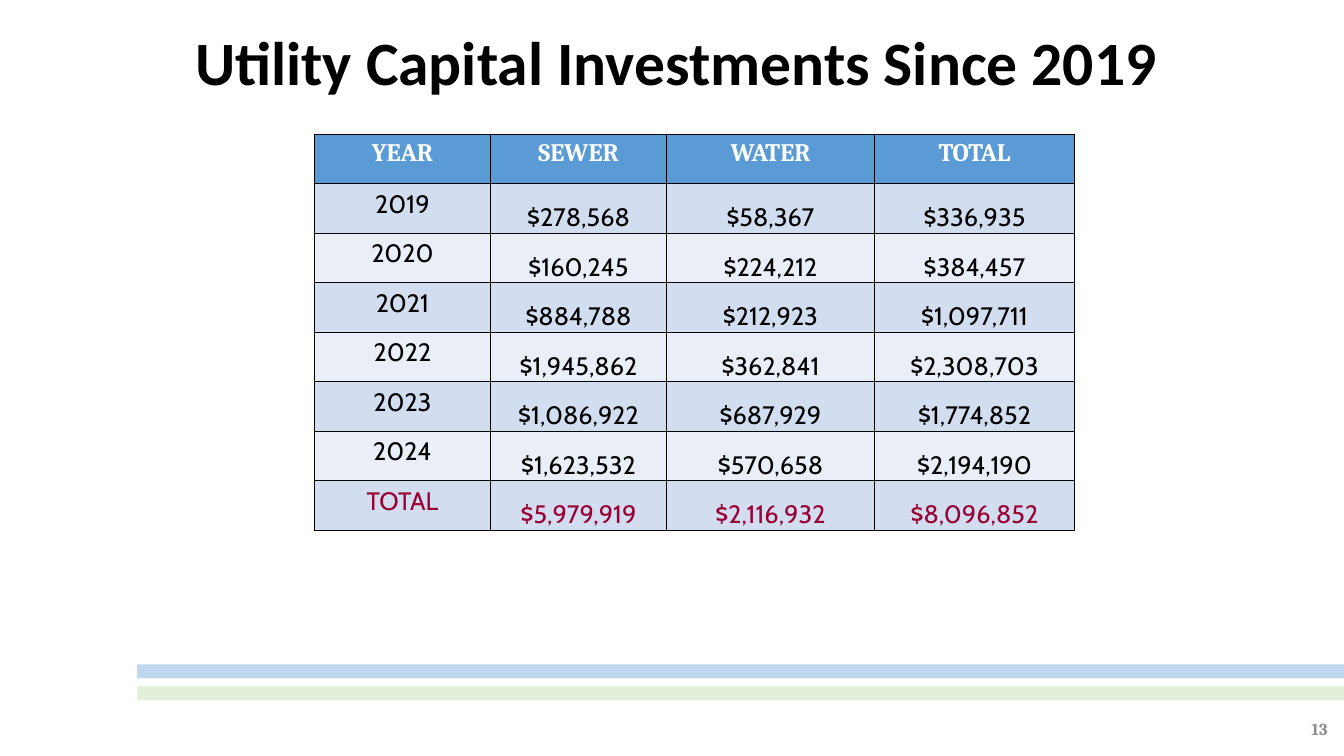
from lxml.etree import SubElement
from pptx import Presentation
from pptx.dml.color import RGBColor
from pptx.enum.shapes import MSO_SHAPE
from pptx.enum.text import MSO_ANCHOR as ANCHOR, PP_ALIGN as ALIGN
from pptx.oxml import parse_xml
from pptx.oxml.ns import nsdecls
from pptx.util import Pt


def color(value):
    return RGBColor.from_string(value)


def set_text(frame, text, font_name, size, text_color, bold, align):
    paragraph = frame.paragraphs[0]
    paragraph.text = text
    paragraph.alignment = align
    font = paragraph.font
    font.name, font.size, font.bold = font_name, Pt(size), bold
    font.color.rgb = color(text_color)
    return paragraph


presentation = Presentation()
presentation.slide_width, presentation.slide_height = Pt(960), Pt(540)
slide = presentation.slides.add_slide(presentation.slide_layouts[6])

# Footer stripes
for top, stripe_color in [(490.3, "E2F0D9"), (474.5, "BDD7EE")]:
    stripe = slide.shapes.add_shape(MSO_SHAPE.RECTANGLE, Pt(98), Pt(top), Pt(862), Pt(10))
    stripe.shadow.inherit = False
    stripe.fill.solid()
    stripe.fill.fore_color.rgb = color(stripe_color)
    stripe.line.fill.background()

# Title and page number
labels = [
    ((26.6, 10.8, 913.7, 72), "Utility Capital Investments Since 2019", "Calibri", 44, "000000", ALIGN.CENTER, 0.9),
    ((739.4, 506.2, 216, 28.8), "13", "Cambria", 12, "8C8C8C", ALIGN.RIGHT, 1.0),
]
for box, text, font_name, size, text_color, align, spacing in labels:
    frame = slide.shapes.add_textbox(*map(Pt, box)).text_frame
    frame.word_wrap = True
    frame.vertical_anchor = ANCHOR.MIDDLE
    paragraph = set_text(frame, text, font_name, size, text_color, True, align)
    paragraph.line_spacing = spacing

# Investment table
rows = [
    ("YEAR", "SEWER", "WATER", "TOTAL"),
    ("2019", "$278,568", "$58,367", "$336,935"),
    ("2020", "$160,245", "$224,212", "$384,457"),
    ("2021", "$884,788", "$212,923", "$1,097,711"),
    ("2022", "$1,945,862", "$362,841", "$2,308,703"),
    ("2023", "$1,086,922", "$687,929", "$1,774,852"),
    ("2024", "$1,623,532", "$570,658", "$2,194,190"),
    ("TOTAL", "$5,979,919", "$2,116,932", "$8,096,852"),
]
column_widths = [125.8, 125.8, 148.5, 143]
row_height = 35.37
table = slide.shapes.add_table(
    len(rows), len(column_widths), Pt(224.6), Pt(95.9),
    Pt(sum(column_widths)), Pt(row_height * len(rows))).table
for column, width in zip(table.columns, column_widths):
    column.width = Pt(width)

for row_index, values in enumerate(rows):
    table.rows[row_index].height = Pt(row_height)
    is_header = row_index == 0
    if is_header:
        fill_color, text_color, font_name = "5B9BD5", "FFFFFF", "Cambria"
    else:
        fill_color = "D2DEEF" if row_index % 2 else "EAEFF7"
        text_color = "990033" if row_index == len(rows) - 1 else "000000"
        font_name = "Cabin"

    for column_index, value in enumerate(values):
        cell = table.cell(row_index, column_index)
        set_text(cell.text_frame, value, font_name, 18, text_color, is_header, ALIGN.CENTER)
        cell.fill.solid()
        cell.fill.fore_color.rgb = color(fill_color)
        # Amounts sit at the bottom of their cells
        if not is_header and column_index > 0:
            cell.vertical_anchor = ANCHOR.BOTTOM
            cell.margin_left = cell.margin_right = cell.margin_top = Pt(0.75)
            cell.margin_bottom = Pt(0)
        # Black borders on all four sides
        properties = cell._tc.get_or_add_tcPr()
        for position, side in enumerate(("lnL", "lnR", "lnT", "lnB")):
            border = parse_xml(
                f'<a:{side} {nsdecls("a")} w="{Pt(1)}"><a:solidFill>'
                f'<a:srgbClr val="000000"/></a:solidFill></a:{side}>')
            properties.insert(position, border)

presentation.save("out.pptx")
